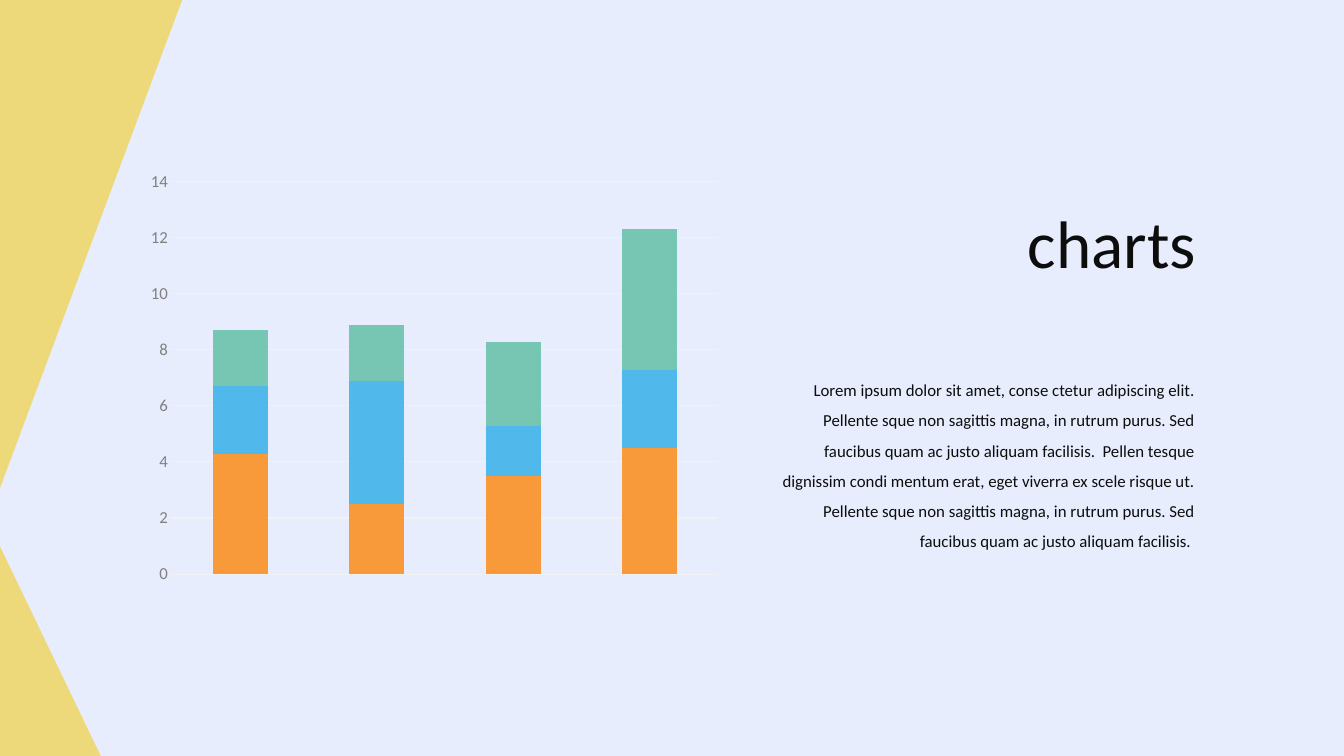
from pptx import Presentation
from pptx.chart.data import CategoryChartData
from pptx.dml.color import RGBColor
from pptx.enum.chart import XL_CHART_TYPE, XL_TICK_MARK
from pptx.enum.shapes import MSO_SHAPE
from pptx.enum.text import MSO_AUTO_SIZE, PP_ALIGN
from pptx.util import Inches, Pt

PALE = RGBColor(0xE7, 0xED, 0xFD)
GOLD = RGBColor(0xED, 0xD9, 0x7A)
ORANGE = RGBColor(0xF8, 0x9A, 0x3A)
BLUE = RGBColor(0x51, 0xB8, 0xEB)
GREEN = RGBColor(0x77, 0xC6, 0xB4)
GRAY = RGBColor(0x80, 0x80, 0x80)
MIST = RGBColor(0xF2, 0xF2, 0xF2)
INK = RGBColor(0x0D, 0x0D, 0x0D)
BLACK = RGBColor(0, 0, 0)
FONT = "Calibri"

CATS = ["1", "2", "3", "4"]
SERIES = [
    ("Series 1", [4.3, 2.5, 3.5, 4.5], ORANGE),
    ("Series 2", [2.4, 4.4, 1.8, 2.8], BLUE),
    ("Series 3", [2, 2, 3, 5], GREEN),
]
CHART = (1.38, 1.62, 5.86, 4.26)
CORNERS = [((0, 5.42, 1, 2.08), False), ((0, -0.01, 1.81, 4.85), True)]
TEXTS = [
    ("charts", (8.67, 1.95, 3.29, 0.91), 48, 1.0),
    ("Lorem ipsum dolor sit amet, conse ctetur adipiscing elit. "
     "Pellente sque non sagittis magna, in rutrum purus. Sed faucibus "
     "quam ac justo aliquam facilisis.  Pellen tesque dignissim condi "
     "mentum erat, eget viverra ex scele risque ut. Pellente sque non "
     "sagittis magna, in rutrum purus. Sed faucibus quam ac justo "
     "aliquam facilisis. ", (7.53, 3.62, 4.42, 1.89), 12, 1.5),
]


def style(item, **values):
    for name, value in values.items():
        setattr(item, name, value)


def paint(fill, color):
    fill.solid()
    fill.fore_color.rgb = color


def write(font, size, color):
    style(font, name=FONT, size=Pt(size))
    font.color.rgb = color


def place(box):
    return [Inches(n) for n in box]


def add_corner(slide, box, top):
    shape = slide.shapes.add_shape(MSO_SHAPE.RIGHT_TRIANGLE, *place(box))
    shape.shadow.inherit = False
    paint(shape.fill, GOLD)
    shape.line.fill.background()
    if top:
        shape.rotation = 180
        shape.element.spPr.xfrm.set("flipH", "1")


def add_bars(slide):
    data = CategoryChartData()
    data.categories = CATS
    for name, vals, color in SERIES:
        data.add_series(name, vals)
    kind = XL_CHART_TYPE.COLUMN_STACKED
    chart = slide.shapes.add_chart(kind, *place(CHART), data).chart
    style(chart, has_legend=False, has_title=False)
    write(chart.font, 10, BLACK)
    plot = chart.plots[0]
    style(plot, gap_width=150, overlap=100, vary_by_categories=False)
    for series, (name, vals, color) in zip(plot.series, SERIES):
        paint(series.format.fill, color)
    chart.category_axis.visible = False
    axis = chart.value_axis
    style(axis, has_major_gridlines=True,
          major_tick_mark=XL_TICK_MARK.NONE,
          minor_tick_mark=XL_TICK_MARK.NONE)
    write(axis.tick_labels.font, 12, GRAY)
    axis.format.line.fill.background()
    grid = axis.major_gridlines.format.line
    grid.width = Pt(0.75)
    grid.color.rgb = MIST


def add_text(slide, text, box, size, space):
    frame = slide.shapes.add_textbox(*place(box)).text_frame
    style(frame, word_wrap=True, auto_size=MSO_AUTO_SIZE.SHAPE_TO_FIT_TEXT)
    para = frame.paragraphs[0]
    style(para, alignment=PP_ALIGN.RIGHT, line_spacing=space)
    run = para.add_run()
    run.text = text
    write(run.font, size, INK)


def main():
    deck = Presentation()
    style(deck, slide_width=Inches(13.33), slide_height=Inches(7.5))
    slide = deck.slides.add_slide(deck.slide_layouts[6])
    paint(slide.background.fill, PALE)
    for box, top in CORNERS:
        add_corner(slide, box, top)
    add_bars(slide)
    for entry in TEXTS:
        add_text(slide, *entry)
    deck.save("out.pptx")


if __name__ == "__main__":
    main()
